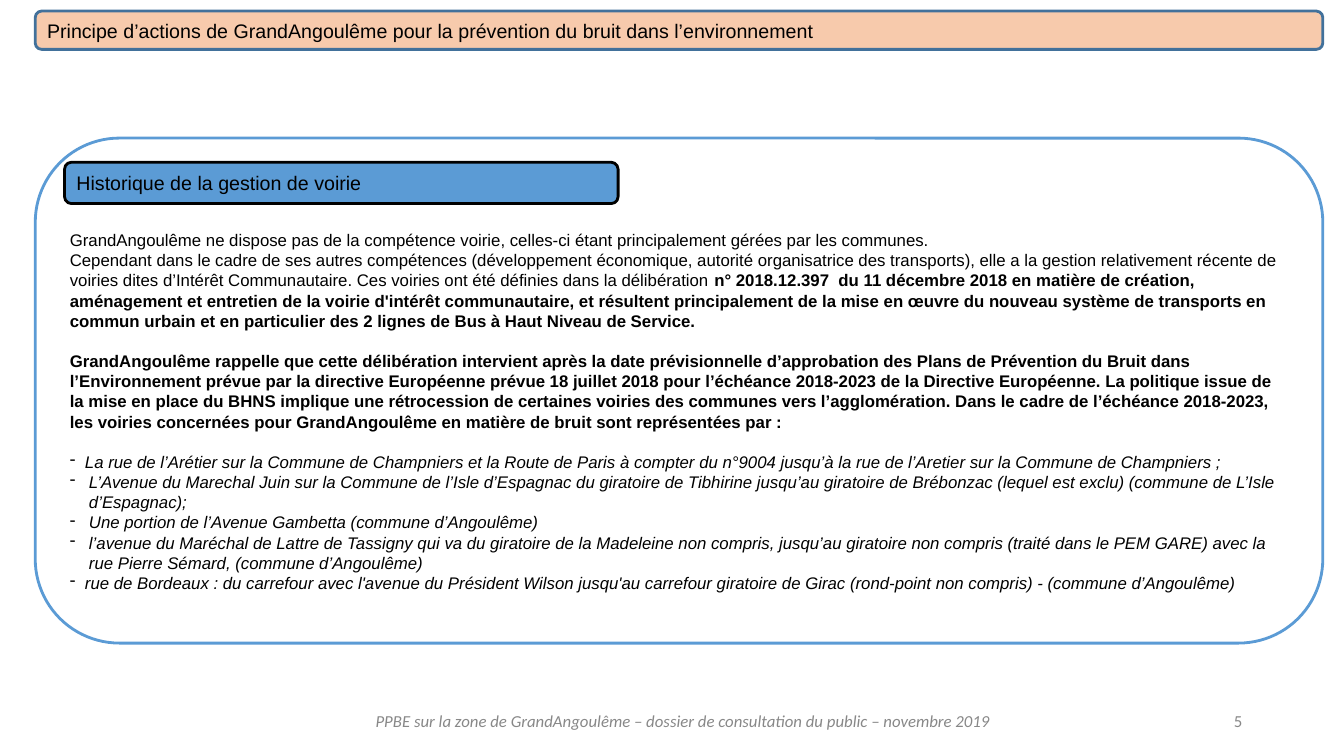
"""Build the slide on the history of road management and noise prevention."""
from lxml import etree
from pptx import Presentation
from pptx.dml.color import RGBColor
from pptx.enum.shapes import MSO_SHAPE
from pptx.enum.text import MSO_ANCHOR, PP_ALIGN
from pptx.oxml.ns import qn
from pptx.util import Inches, Pt

ROUNDED = MSO_SHAPE.ROUNDED_RECTANGLE
MIDDLE = MSO_ANCHOR.MIDDLE
LEFT, CENTER, RIGHT = PP_ALIGN.LEFT, PP_ALIGN.CENTER, PP_ALIGN.RIGHT
BLACK = RGBColor(0x00, 0x00, 0x00)
WHITE = RGBColor(0xFF, 0xFF, 0xFF)
BLUE = RGBColor(0x5B, 0x9B, 0xD5)
DARK_BLUE = RGBColor(0x42, 0x71, 0x9B)
PEACH = RGBColor(0xF7, 0xCA, 0xAC)
GREY = RGBColor(0x88, 0x88, 0x88)
LINE_HEIGHT = Pt(14.4)


def add_run(p, text, size=12, font="Arial", color=BLACK, bold=False, italic=False):
    r = p.add_run()
    r.text = text
    r.font.size = Pt(size)
    r.font.name = font
    r.font.color.rgb = color
    r.font.bold = bold
    r.font.italic = italic


prs = Presentation()
prs.slide_width = Inches(13.33)
prs.slide_height = Inches(7.5)
s = prs.slides.add_slide(prs.slide_layouts[6])

boxes = [
    (0.35, 1.37, 12.77, 5.01, WHITE, BLUE, ""),
    (0.64, 1.61, 5.49, 0.41, BLUE, BLACK, "Historique de la gestion de voirie"),
    (0.35, 0.11, 12.77, 0.38, PEACH, DARK_BLUE,
     "Principe d’actions de GrandAngoulême pour la prévention du bruit dans l’environnement"),
]
frames = []
for x, y, w, h, fill, line, title in boxes:
    sp = s.shapes.add_shape(ROUNDED, Inches(x), Inches(y), Inches(w), Inches(h))
    sp.shadow.inherit = False
    sp.fill.solid()
    sp.fill.fore_color.rgb = fill
    sp.line.color.rgb = line
    sp.line.width = Pt(2)
    tf = sp.text_frame
    tf.word_wrap = True
    tf.vertical_anchor = MIDDLE
    tf.paragraphs[0].alignment = LEFT
    if title:
        add_run(tf.paragraphs[0], title, size=14)
    frames.append(tf)

paragraphs = [
    (0, 0, [("GrandAngoulême ne dispose pas de la compétence voirie, celles-ci étant "
             "principalement gérées par les communes.", {})]),
    (0, 0, [("Cependant dans le cadre de ses autres compétences (développement économique, "
             "autorité organisatrice des transports), elle a la gestion relativement récente "
             "de voiries dites d’Intérêt Communautaire. Ces voiries ont été définies dans la "
             "délibération ", {}),
            ("n° 2018.12.397  du 11 décembre 2018 en matière de création, aménagement et "
             "entretien de la voirie d'intérêt communautaire, et résultent principalement de "
             "la mise en œuvre du nouveau système de transports en commun urbain et en "
             "particulier des 2 lignes de Bus à Haut Niveau de Service.", {"bold": True})]),
    (1, 0, [("GrandAngoulême rappelle que cette délibération intervient après la date "
             "prévisionnelle d’approbation des Plans de Prévention du Bruit dans "
             "l’Environnement prévue par la directive Européenne prévue 18 juillet 2018 pour "
             "l’échéance 2018-2023 de la Directive Européenne. La politique issue de la mise "
             "en place du BHNS implique une rétrocession de certaines voiries des communes "
             "vers l’agglomération. Dans le cadre de l’échéance 2018-2023, les voiries "
             "concernées pour GrandAngoulême en matière de bruit sont représentées par :",
             {"bold": True})]),
    (1, 0.15, [("La rue de l’Arétier sur la Commune de Champniers et la Route de Paris à "
                "compter du n°9004 jusqu’à la rue de l’Aretier sur la Commune de "
                "Champniers ;", {"italic": True})]),
    (0, 0.19, [("L’Avenue du Marechal Juin sur la Commune de l’Isle d’Espagnac du giratoire "
                "de Tibhirine jusqu’au giratoire de Brébonzac (lequel est exclu) (commune de "
                "L’Isle d’Espagnac);", {"italic": True})]),
    (0, 0.19, [("Une portion de l’Avenue Gambetta (commune d’Angoulême)", {"italic": True})]),
    (0, 0.19, [("l’avenue du Maréchal de Lattre de Tassigny qui va du giratoire de la "
                "Madeleine non compris, jusqu’au giratoire non compris (traité dans le PEM "
                "GARE) avec la rue Pierre Sémard, (commune d’Angoulême)", {"italic": True})]),
    (0, 0.15, [("rue de Bordeaux : du carrefour avec l'avenue du Président Wilson jusqu'au "
                "carrefour giratoire de Girac (rond-point non compris) - (commune "
                "d’Angoulême)", {"italic": True})]),
]
tf = frames[0]
tf.margin_top = Inches(0.46)
for i, (gap, indent, runs) in enumerate(paragraphs):
    p = tf.add_paragraph() if i else tf.paragraphs[0]
    p.alignment = LEFT
    p.line_spacing = LINE_HEIGHT
    p.space_before = LINE_HEIGHT * gap
    if indent:
        pPr = p._p.get_or_add_pPr()
        pPr.set("marL", str(Inches(indent)))
        pPr.set("indent", str(-Inches(indent)))
        buClr = etree.SubElement(pPr, qn("a:buClr"))
        etree.SubElement(buClr, qn("a:srgbClr")).set("val", str(BLACK))
        etree.SubElement(pPr, qn("a:buChar")).set("char", "-")
    for text, style in runs:
        add_run(p, text, **style)

footers = [
    (9.42, 3, RIGHT, False, "5"),
    (3.57, 6.41, CENTER, True,
     "PPBE sur la zone de GrandAngoulême – dossier de consultation du public – novembre 2019"),
]
for x, w, align, italic, text in footers:
    tf = s.shapes.add_textbox(Inches(x), Inches(6.95), Inches(w), Inches(0.4)).text_frame
    tf.word_wrap = True
    tf.vertical_anchor = MIDDLE
    tf.paragraphs[0].alignment = align
    add_run(tf.paragraphs[0], text, font="Calibri", color=GREY, italic=italic)

prs.save("out.pptx")
